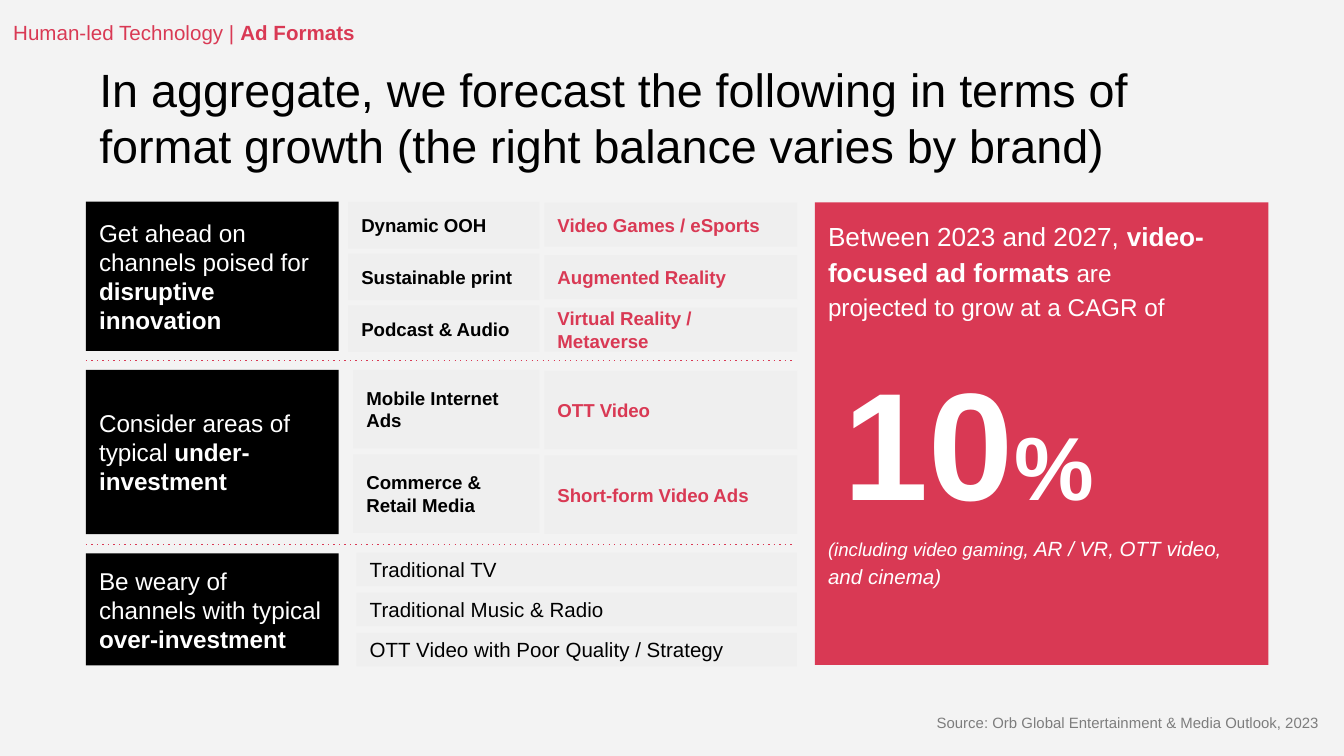
from lxml import etree
from pptx import Presentation
from pptx.dml.color import RGBColor
from pptx.enum import shapes, text
from pptx.oxml.ns import qn
from pptx.util import Pt

ROSE = RGBColor(0xD9, 0x39, 0x54)
BLACK = RGBColor(0, 0, 0)
WHITE = RGBColor(0xFF, 0xFF, 0xFF)
PAPER = RGBColor(0xF3, 0xF3, 0xF3)
CELL = RGBColor(0xEF, 0xEF, 0xEF)
GREY = RGBColor(0x7D, 0x7D, 0x7D)
LEFT = text.PP_ALIGN.LEFT


def write(box, paragraphs, size, color, bold=False, align=LEFT, anchor=text.MSO_ANCHOR.MIDDLE):
    """Each paragraph is a list of (words, bold, size) runs; None keeps the paragraph's font."""
    frame = box.text_frame
    frame.word_wrap = True
    frame.auto_size = text.MSO_AUTO_SIZE.NONE
    frame.vertical_anchor = anchor
    frame.margin_left = frame.margin_right = Pt(7.2)
    frame.margin_top = frame.margin_bottom = Pt(7.2)
    for index, runs in enumerate(paragraphs):
        para = frame.add_paragraph() if index else frame.paragraphs[0]
        para.alignment = align
        para.font.name = "Arial"
        para.font.size = Pt(size)
        para.font.bold = bold
        para.font.color.rgb = color
        for words, run_bold, run_size in runs:
            span = para.add_run()
            span.text = words
            span.font.bold = run_bold
            if run_size:
                span.font.size = Pt(run_size)
    return frame


def add_block(left, top, width, height, fill):
    block = page.shapes.add_shape(
        shapes.MSO_SHAPE.RECTANGLE, Pt(left), Pt(top), Pt(width), Pt(height))
    block.shadow.inherit = False
    block.fill.solid()
    block.fill.fore_color.rgb = fill
    block.line.fill.background()
    return block


deck = Presentation()
deck.slide_width, deck.slide_height = Pt(720), Pt(405)
page = deck.slides.add_slide(deck.slide_layouts[5])
page.background.fill.solid()
page.background.fill.fore_color.rgb = PAPER

# Title
title = page.shapes.title
title.left, title.top, title.width, title.height = Pt(46), Pt(22.5), Pt(633), Pt(80)
headline = ("In aggregate, we forecast the following in terms of "
            "format growth (the right balance varies by brand)")
write(title, [[(headline, None, None)]], 25, BLACK)

# Section label and source
section = page.shapes.add_textbox(Pt(0), Pt(0), Pt(354), Pt(35))
write(section, [[("Human-led Technology | ", None, None), ("Ad Formats", True, None)]], 11, ROSE)
source = page.shapes.add_textbox(Pt(368), Pt(375), Pt(346), Pt(24.5))
write(source, [[("Source: Orb Global Entertainment & Media Outlook, 2023", None, None)]],
      8, GREY, align=text.PP_ALIGN.RIGHT)

# Black advice blocks
advice = [
    (108, 80, "Get ahead on channels poised for ", "disruptive innovation"),
    (198.2, 88, "Consider areas of typical ", "under-investment"),
    (296.5, 60, "Be weary of channels with typical ", "over-investment"),
]
for top, height, lead, stress in advice:
    block = add_block(46, top, 135.5, height, BLACK)
    write(block, [[(lead, None, None), (stress, True, None)]], 13, WHITE)

# Format cells: left, top, step, width, height, size, bold, colour, labels
columns = [
    (186.5, 108.2, 27.7, 102.5, 25, 10, True, BLACK,
     ["Dynamic OOH", "Sustainable print", "Podcast & Audio"]),
    (291.6, 108.6, 28.1, 135.5, 23.6, 10, True, ROSE,
     ["Video Games / eSports", "Augmented Reality", "Virtual Reality / Metaverse"]),
    (189.2, 198.2, 45.3, 99.8, 42, 10, True, BLACK,
     ["Mobile Internet Ads", "Commerce & Retail Media"]),
    (291.6, 198.7, 45.3, 135.5, 42, 10, True, ROSE,
     ["OTT Video", "Short-form Video Ads"]),
    (191, 296, 21.5, 236, 18, 11, False, BLACK,
     ["Traditional TV", "Traditional Music & Radio", "OTT Video with Poor Quality / Strategy"]),
]
for left, top, step, width, height, size, bold, color, labels in columns:
    for row, label in enumerate(labels):
        cell = add_block(left, top + row * step, width, height, CELL)
        write(cell, [[(label, None, None)]], size, color, bold)

# Dotted dividers
for level in (193, 291.6):
    divider = page.shapes.add_connector(
        shapes.MSO_CONNECTOR.STRAIGHT, Pt(46), Pt(level), Pt(425.5), Pt(level))
    divider.line.width = Pt(0.75)
    divider.line.color.rgb = ROSE
    properties = divider._element.spPr
    etree.SubElement(properties.find(qn("a:ln")), qn("a:prstDash"), val="dot")
    etree.SubElement(properties, qn("a:effectLst"))

# Growth panel
panel = add_block(436.5, 108.5, 243, 247.7, ROSE)
frame = write(panel, [
    [("Between 2023 and 2027, ", None, 14), ("video-focused ad formats", True, 14),
     (" are", None, None)],
    [("projected to grow at a CAGR of", None, None)],
    [("(including video gaming", None, 10), (", AR / VR, OTT video, and cinema)", None, 11)],
], 13, WHITE, anchor=text.MSO_ANCHOR.TOP)
for para in frame.paragraphs:
    para.line_spacing = 1.15
note = frame.paragraphs[-1]
note.space_before = Pt(113)
note.font.italic = True

# Growth rate
rate = page.shapes.add_textbox(Pt(445), Pt(198), Pt(233), Pt(75))
write(rate, [[("10", None, None), ("%", None, 48)]], 82, WHITE, bold=True)

deck.save("out.pptx")
